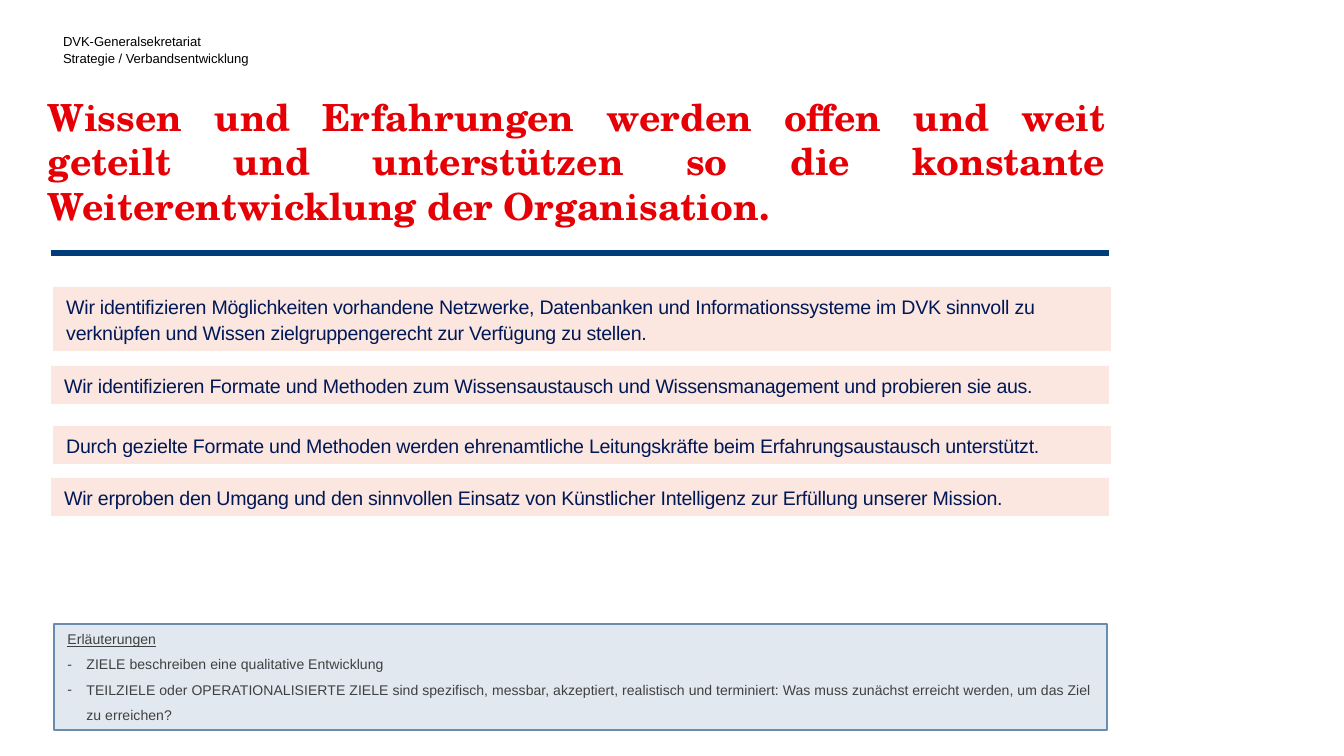
from lxml.etree import SubElement
from pptx import Presentation
from pptx.dml.color import RGBColor
from pptx.enum.shapes import MSO_CONNECTOR, MSO_SHAPE
from pptx.enum.text import MSO_ANCHOR, MSO_AUTO_SIZE, PP_ALIGN
from pptx.oxml.ns import qn
from pptx.util import Emu, Pt

EMU_PER_PX = 914400 / 134.4

COLORS = {
    "black": "000000", "red": "E60005", "rule": "003D7A", "goal_fill": "FBE6E0",
    "goal_text": "001856", "note_fill": "E1E8EF", "note_line": "698CAF",
    "note_text": "404040",
}
HEADER = {"name": "Arial", "size": Pt(7), "color": "black"}
TITLE = {"name": "TeX Gyre Schola", "size": Pt(20), "bold": True, "color": "red"}
GOAL = {"name": "Arial", "size": Pt(10.5), "color": "goal_text"}
NOTE = {"name": "Arial", "size": Pt(7.5), "color": "note_text"}
NOTE_HEADING = {**NOTE, "underline": True}

BAR_WIDTH = 1058
# left, top, height, text
GOALS = [
    (53, 287, 64, "Wir identifizieren Möglichkeiten vorhandene Netzwerke, Datenbanken und "
     "Informationssysteme im DVK sinnvoll zu verknüpfen und Wissen zielgruppengerecht "
     "zur Verfügung zu stellen."),
    (51, 366, 38, "Wir identifizieren Formate und Methoden zum Wissensaustausch und "
     "Wissensmanagement und probieren sie aus."),
    (53, 426, 38, "Durch gezielte Formate und Methoden werden ehrenamtliche Leitungskräfte "
     "beim Erfahrungsaustausch unterstützt."),
    (51, 478, 38, "Wir erproben den Umgang und den sinnvollen Einsatz von Künstlicher "
     "Intelligenz zur Erfüllung unserer Mission."),
]
EXPLANATIONS = [
    "ZIELE beschreiben eine qualitative Entwicklung",
    "TEILZIELE oder OPERATIONALISIERTE ZIELE sind spezifisch, messbar, akzeptiert, "
    "realistisch und terminiert: Was muss zunächst erreicht werden, um das Ziel zu erreichen?",
]


def px(length):
    return Emu(round(length * EMU_PER_PX))


def rgb(name):
    return RGBColor.from_string(COLORS[name])


def place(shape, *box):
    for side, length in zip(("left", "top", "width", "height"), box):
        setattr(shape, side, px(length))


def set_frame(frame, anchor=MSO_ANCHOR.TOP, margin=None):
    frame.word_wrap = True
    frame.auto_size = MSO_AUTO_SIZE.NONE
    frame.vertical_anchor = anchor
    if margin is not None:
        for side in ("left", "top", "right", "bottom"):
            setattr(frame, f"margin_{side}", px(margin))


def write(frame, text, style, first=True, align=PP_ALIGN.LEFT, spacing=None):
    paragraph = frame.paragraphs[0] if first else frame.add_paragraph()
    paragraph.alignment = align
    paragraph.space_before = Pt(0)
    if spacing:
        paragraph.line_spacing = Pt(spacing)
    run = paragraph.add_run()
    run.text = text
    for key, value in style.items():
        if key == "color":
            run.font.color.rgb = rgb(value)
        else:
            setattr(run.font, key, value)
    return paragraph


def set_bullet(paragraph, char=None, indent=0):
    properties = paragraph._p.get_or_add_pPr()
    properties.set("marL", str(px(indent)))
    properties.set("indent", str(-px(indent)))
    if char:
        SubElement(properties, qn("a:buChar")).set("char", char)
    else:
        SubElement(properties, qn("a:buNone"))


def add_header(slide):
    header = slide.shapes.add_textbox(px(63), px(32), px(241), px(34))
    set_frame(header.text_frame, margin=0)
    lines = ("DVK-Generalsekretariat", "Strategie / Verbandsentwicklung")
    for index, line in enumerate(lines):
        write(header.text_frame, line, HEADER, first=index == 0, spacing=9)


def fill_title(title):
    place(title, 48, 141, BAR_WIDTH, 40)
    set_frame(title.text_frame, MSO_ANCHOR.MIDDLE, margin=0)
    write(title.text_frame,
          "Wissen und Erfahrungen werden offen und weit geteilt und unterstützen so "
          "die konstante Weiterentwicklung der Organisation.",
          TITLE, align=PP_ALIGN.JUSTIFY)


def add_rule(slide):
    rule = slide.shapes.add_connector(
        MSO_CONNECTOR.STRAIGHT, px(51), px(253), px(51 + BAR_WIDTH), px(253))
    rule.line.color.rgb = rgb("rule")
    rule.line.width = Pt(3)
    SubElement(rule._element.spPr, qn("a:effectLst"))


def add_goal(slide, left, top, height, text):
    bar = slide.shapes.add_shape(
        MSO_SHAPE.RECTANGLE, px(left), px(top), px(BAR_WIDTH), px(height))
    bar.shadow.inherit = False
    bar.fill.solid()
    bar.fill.fore_color.rgb = rgb("goal_fill")
    bar.line.fill.background()
    set_frame(bar.text_frame)
    paragraph = write(bar.text_frame, text, GOAL, spacing=13.5)
    paragraph.runs[0].font._element.set("spc", "-10")


def fill_explanations(note):
    place(note, 54, 624, 1053, 106)
    note.fill.solid()
    note.fill.fore_color.rgb = rgb("note_fill")
    note.line.color.rgb = rgb("note_line")
    note.line.width = Pt(0.75)
    set_frame(note.text_frame)
    set_bullet(write(note.text_frame, "Erläuterungen", NOTE_HEADING))
    for text in EXPLANATIONS:
        item = write(note.text_frame, text, NOTE, first=False, spacing=13.5)
        set_bullet(item, "-", 19)


def main():
    presentation = Presentation()
    presentation.slide_width = px(1344)
    presentation.slide_height = px(756)
    slide = presentation.slides.add_slide(presentation.slide_layouts[1])
    add_header(slide)
    fill_title(slide.shapes.title)
    add_rule(slide)
    for goal in GOALS:
        add_goal(slide, *goal)
    fill_explanations(slide.placeholders[1])
    presentation.save("out.pptx")


if __name__ == "__main__":
    main()
